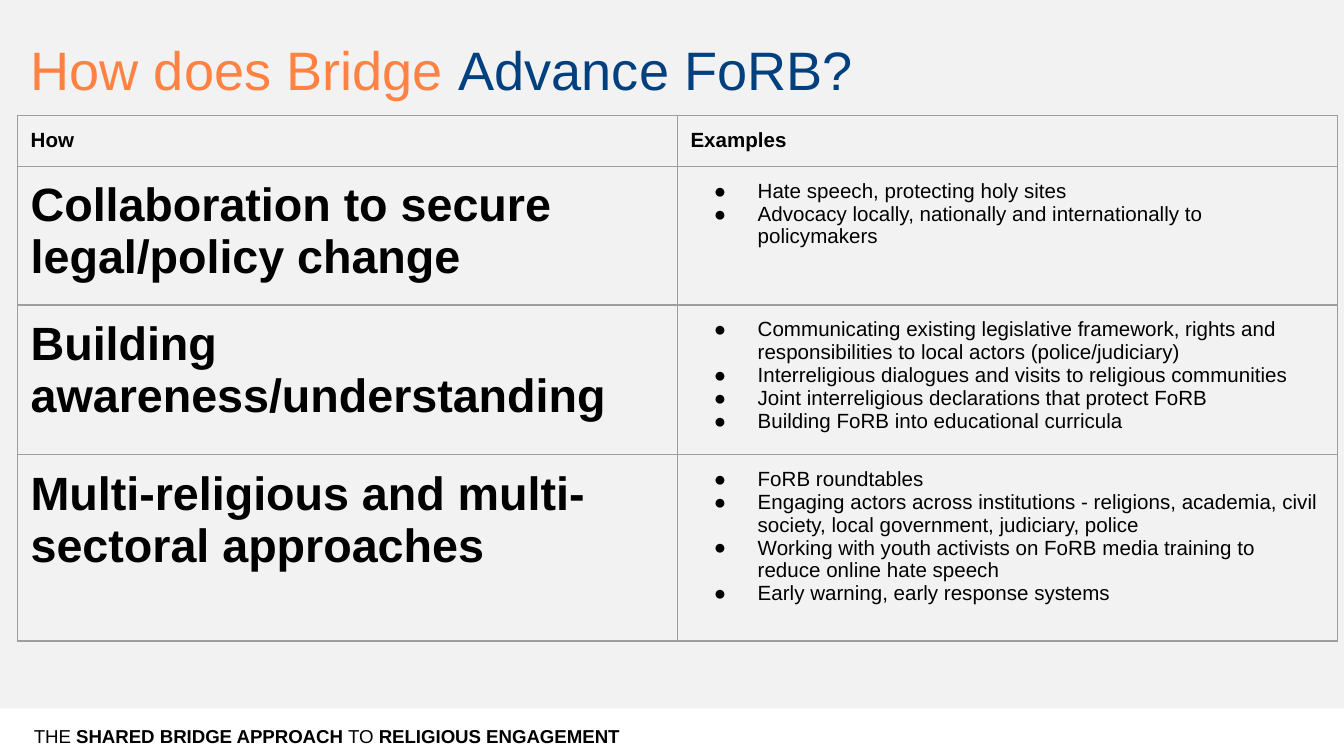
from dataclasses import dataclass

from lxml import etree
from pptx import Presentation
from pptx.dml.color import RGBColor
from pptx.enum.shapes import MSO_SHAPE
from pptx.enum.text import MSO_ANCHOR
from pptx.oxml.ns import qn
from pptx.util import Cm, Pt

RECT = MSO_SHAPE.RECTANGLE
TOP = MSO_ANCHOR.TOP
MIDDLE = MSO_ANCHOR.MIDDLE


@dataclass(frozen=True)
class Theme:
    font: str = "Arial"
    background: str = "F2F2F2"
    band: str = "FFFFFF"
    text: str = "000000"
    accent: str = "FF8242"
    navy: str = "00407F"
    border: str = "9E9E9E"
    title_size: float = 29
    how_size: float = 25
    body_size: float = 11
    footer_size: float = 10
    border_width: float = 0.75
    inset: float = 0.25


THEME = Theme()

TITLE = [("How does Bridge ", THEME.accent), ("Advance FoRB?", THEME.navy)]
FOOTER = [
    ("THE ", False),
    ("SHARED BRIDGE APPROACH ", True),
    ("TO ", False),
    ("RELIGIOUS ENGAGEMENT", True),
]
HEADERS = ["How", "Examples"]
ROWS = [
    ("Collaboration to secure legal/policy change", [
        "Hate speech, protecting holy sites",
        "Advocacy locally, nationally and internationally to policymakers",
    ]),
    ("Building awareness/understanding", [
        "Communicating existing legislative framework, rights and "
        "responsibilities to local actors (police/judiciary)",
        "Interreligious dialogues and visits to religious communities",
        "Joint interreligious declarations that protect FoRB",
        "Building FoRB into educational curricula",
    ]),
    ("Multi-religious and multi-sectoral approaches", [
        "FoRB roundtables",
        "Engaging actors across institutions - religions, academia, civil "
        "society, local government, judiciary, police",
        "Working with youth activists on FoRB media training to reduce "
        "online hate speech",
        "Early warning, early response systems",
    ]),
]
ROW_HEIGHTS = [0.94, 2.47, 2.66, 3.52]


def add_run(p, text, size, color=THEME.text, bold=False):
    r = p.add_run()
    r.text = text
    r.font.name = THEME.font
    r.font.size = Pt(size)
    r.font.bold = bold
    r.font.color.rgb = RGBColor.from_string(color)


def add_text_box(s, box, anchor, inset_y):
    tf = s.shapes.add_textbox(*map(Cm, box)).text_frame
    tf.word_wrap = True
    tf.vertical_anchor = anchor
    tf.margin_left = tf.margin_right = Cm(THEME.inset)
    tf.margin_top = tf.margin_bottom = Cm(inset_y)
    return tf.paragraphs[0]


def add_title(s, box):
    p = add_text_box(s, box, TOP, THEME.inset)
    for text, color in TITLE:
        add_run(p, text, THEME.title_size, color)


def add_footer(s, box):
    left, top, width, height = box
    band = s.shapes.add_shape(RECT, *map(Cm, box))
    band.shadow.inherit = False
    band.fill.solid()
    band.fill.fore_color.rgb = RGBColor.from_string(THEME.band)
    band.line.fill.background()
    text_box = (left + 0.39, top + 0.34, width / 2, height - 0.54)
    p = add_text_box(s, text_box, MIDDLE, 0.13)
    for text, bold in FOOTER:
        add_run(p, text, THEME.footer_size, bold=bold)


def set_bullet(p):
    pPr = p._p.get_or_add_pPr()
    pPr.set("marL", str(Cm(1.27)))
    pPr.set("indent", str(Cm(-0.83)))
    color = etree.SubElement(pPr, qn("a:buClr"))
    etree.SubElement(color, qn("a:srgbClr"), val=THEME.text)
    etree.SubElement(pPr, qn("a:buFont"), typeface=THEME.font)
    etree.SubElement(pPr, qn("a:buChar"), char="●")


def set_borders(cell):
    tcPr = cell._tc.get_or_add_tcPr()
    for i, side in enumerate(("lnL", "lnR", "lnT", "lnB")):
        ln = etree.Element(qn(f"a:{side}"), w=str(Pt(THEME.border_width)))
        fill = etree.SubElement(ln, qn("a:solidFill"))
        etree.SubElement(fill, qn("a:srgbClr"), val=THEME.border)
        tcPr.insert(i, ln)


def fill_cell(cell, texts, size, bold, bulleted=False):
    cell.fill.background()
    cell.vertical_anchor = TOP
    cell.margin_left = cell.margin_right = Cm(THEME.inset)
    cell.margin_top = cell.margin_bottom = Cm(THEME.inset)
    set_borders(cell)
    tf = cell.text_frame
    for i, text in enumerate(texts):
        p = tf.add_paragraph() if i else tf.paragraphs[0]
        if bulleted:
            set_bullet(p)
        add_run(p, text, size, bold=bold)


def add_examples_table(s, box):
    shape = s.shapes.add_table(len(ROWS) + 1, len(HEADERS), *map(Cm, box))
    table = shape.table
    table.first_row = table.horz_banding = False
    for column in table.columns:
        column.width = Cm(box[2] / len(HEADERS))
    for row, height in zip(table.rows, ROW_HEIGHTS):
        row.height = Cm(height)
    for i, header in enumerate(HEADERS):
        fill_cell(table.cell(0, i), [header], THEME.body_size, True)
    for i, (how, examples) in enumerate(ROWS, 1):
        fill_cell(table.cell(i, 0), [how], THEME.how_size, True)
        fill_cell(table.cell(i, 1), examples, THEME.body_size, False, True)


def main():
    prs = Presentation()
    prs.slide_width, prs.slide_height = Cm(25.4), Cm(14.29)
    s = prs.slides.add_slide(prs.slide_layouts[6])
    s.background.fill.solid()
    s.background.fill.fore_color.rgb = RGBColor.from_string(THEME.background)
    add_footer(s, (0, 13.39, 25.4, 0.9))
    add_title(s, (0.33, 0.43, 24.13, 2.31))
    add_examples_table(s, (0.33, 2.18, 24.94, sum(ROW_HEIGHTS)))
    prs.save("out.pptx")


if __name__ == "__main__":
    main()
